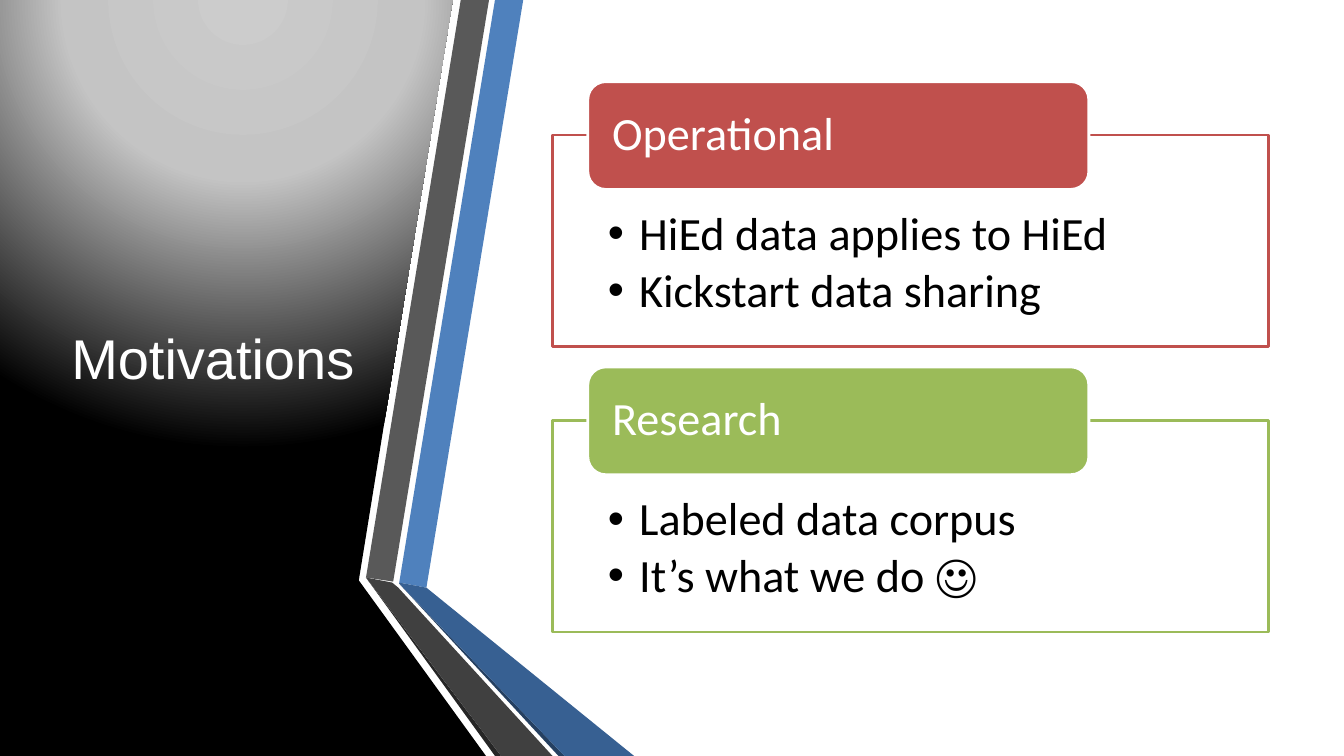
from lxml import etree
from pptx import Presentation, util as u
from pptx.dml.color import RGBColor
from pptx.enum import shapes, text
from pptx.oxml import ns, parse_xml

# Content
TITLE = "Motivations"
WHITE = RGBColor(0xFF, 0xFF, 0xFF)
BLACK = RGBColor(0x00, 0x00, 0x00)
RED = RGBColor(0xC0, 0x50, 0x4D)
GREEN = RGBColor(0x9B, 0xBB, 0x59)
BLUE = RGBColor(0x4F, 0x81, 0xBD)
MID_BLUE = RGBColor(0x37, 0x60, 0x92)
DARK_BLUE = RGBColor(0x25, 0x40, 0x61)
GREY = RGBColor(0x59, 0x59, 0x59)
DARK_GREY = RGBColor(0x40, 0x40, 0x40)
DEEP_GREY = RGBColor(0x26, 0x26, 0x26)

SECTIONS = [
    ("Operational", RED, ["HiEd data applies to HiEd", "Kickstart data sharing"]),
    ("Research", GREEN, ["Labeled data corpus", "It’s what we do ☺"]),
]
PANEL = [(0, 0), (4.49, 0), (3.56, 5.75), (3.56, 5.76), (4.82, 7.5), (0, 7.5)]
RIBBONS = [
    (BLUE, [(3.96, 5.78), (4.23, 5.83), (5.19, 0), (4.91, 0)]),
    (GREY, [(4.85, 0), (4.57, 0), (3.63, 5.73), (3.9, 5.77)]),
    (DEEP_GREY, [(3.63, 5.73), (4.91, 7.5), (4.97, 7.5)]),
    (DARK_BLUE, [(3.96, 5.79), (5.54, 7.5), (5.6, 7.5)]),
    (MID_BLUE, [(3.96, 5.79), (5.6, 7.5), (6.29, 7.5), (4.23, 5.83), (3.96, 5.78)]),
    (DARK_GREY, [(5.48, 7.5), (3.95, 5.83), (3.89, 5.78), (3.63, 5.73), (4.97, 7.5)]),
]
GLOW_STOPS = [(0, "CCCCCC"), (40, "C4C4C4"), (100, "000000")]

# Layout
FRAME_LEFT, FRAME_TOP, FRAME_WIDTH, FRAME_HEIGHT = 5.48, 1.34, 7.1, 2.1
TAB_LEFT, TAB_TOP, TAB_WIDTH, TAB_HEIGHT = 5.83, 0.81, 4.97, 1.07
SECTION_STEP = 2.83
BULLET_INDENT = u.Inches(0.31)


def set_values(target, values):
    for name, value in values.items():
        setattr(target, name, value)


def add_outline(page, points):
    corners = [(u.Inches(x), u.Inches(y)) for x, y in points]
    builder = page.shapes.build_freeform(*corners[0], scale=1.0)
    builder.add_line_segments(corners[1:], close=True)
    outline = builder.convert_to_shape()
    outline.shadow.inherit = False
    outline.line.fill.background()
    return outline


def fill_with_glow(shape):
    stops = "".join(
        f'<a:gs pos="{pos * 1000}"><a:srgbClr val="{colour}"/></a:gs>'
        for pos, colour in GLOW_STOPS)
    gradient = parse_xml(
        f'<a:gradFill {ns.nsdecls("a")}><a:gsLst>{stops}</a:gsLst><a:path path="circle">'
        '<a:fillToRect l="50000" t="-80000" r="50000" b="180000"/></a:path></a:gradFill>')
    shape.fill.solid()
    properties = shape._element.spPr
    properties.replace(properties.find(ns.qn("a:solidFill")), gradient)


def add_box(page, kind, place, fill, line, frame_format):
    box = page.shapes.add_shape(kind, *[u.Inches(length) for length in place])
    box.shadow.inherit = False
    box.fill.solid()
    box.fill.fore_color.rgb = fill
    box.line.color.rgb = line
    box.line.width = u.Pt(2)
    set_values(box.text_frame, {"word_wrap": True, **frame_format})
    return box


def write(para, words, size, font, colour, align=text.PP_ALIGN.LEFT):
    para.alignment = align
    span = para.add_run()
    span.text = words
    set_values(span.font, {"size": u.Pt(size), "name": font})
    span.font.color.rgb = colour


def add_bullet(para):
    properties = para._p.get_or_add_pPr()
    properties.set("marL", str(BULLET_INDENT))
    properties.set("indent", str(-BULLET_INDENT))
    etree.SubElement(properties, ns.qn("a:buFont")).set("typeface", "Arial")
    etree.SubElement(properties, ns.qn("a:buChar")).set("char", "•")


def add_section(page, top_shift, heading, colour, points):
    frame = add_box(
        page, shapes.MSO_SHAPE.RECTANGLE,
        (FRAME_LEFT, FRAME_TOP + top_shift, FRAME_WIDTH, FRAME_HEIGHT), WHITE, colour,
        {"vertical_anchor": text.MSO_ANCHOR.TOP,
         "margin_left": u.Inches(0.55), "margin_right": u.Inches(0.55),
         "margin_top": u.Inches(0.75), "margin_bottom": u.Inches(0.26)}).text_frame
    for index, point in enumerate(points):
        para = frame.add_paragraph() if index else frame.paragraphs[0]
        add_bullet(para)
        set_values(para, {"level": 1, "line_spacing": 0.9, "space_after": u.Pt(5)})
        write(para, point, 33, "Calibri", BLACK)

    tab = add_box(
        page, shapes.MSO_SHAPE.ROUNDED_RECTANGLE,
        (TAB_LEFT, TAB_TOP + top_shift, TAB_WIDTH, TAB_HEIGHT), colour, WHITE,
        {"vertical_anchor": text.MSO_ANCHOR.MIDDLE,
         "margin_left": u.Inches(0.19), "margin_right": u.Inches(0.19),
         "margin_top": 0, "margin_bottom": 0}).text_frame
    tab.paragraphs[0].line_spacing = 0.9
    write(tab.paragraphs[0], heading, 33, "Calibri", WHITE)


def main():
    deck = Presentation()
    set_values(deck, {"slide_width": u.Inches(13.33), "slide_height": u.Inches(7.5)})
    page = deck.slides.add_slide(deck.slide_layouts[5])

    # Dark panel and folded ribbons
    fill_with_glow(add_outline(page, PANEL))
    for colour, points in RIBBONS:
        ribbon = add_outline(page, points)
        ribbon.fill.solid()
        ribbon.fill.fore_color.rgb = colour

    # Title, brought in front of the panel
    title = page.shapes.title
    set_values(title, {"left": u.Inches(0.59), "top": u.Inches(0.75),
                       "width": u.Inches(3.04), "height": u.Inches(5.58)})
    set_values(title.text_frame, {"word_wrap": True, "auto_size": text.MSO_AUTO_SIZE.NONE,
                                  "vertical_anchor": text.MSO_ANCHOR.MIDDLE})
    write(title.text_frame.paragraphs[0], TITLE, 40, "Arial", WHITE, text.PP_ALIGN.CENTER)
    page.shapes._spTree.append(title._element)

    # Framed sections
    for index, section in enumerate(SECTIONS):
        add_section(page, index * SECTION_STEP, *section)

    deck.save("out.pptx")


if __name__ == "__main__":
    main()
